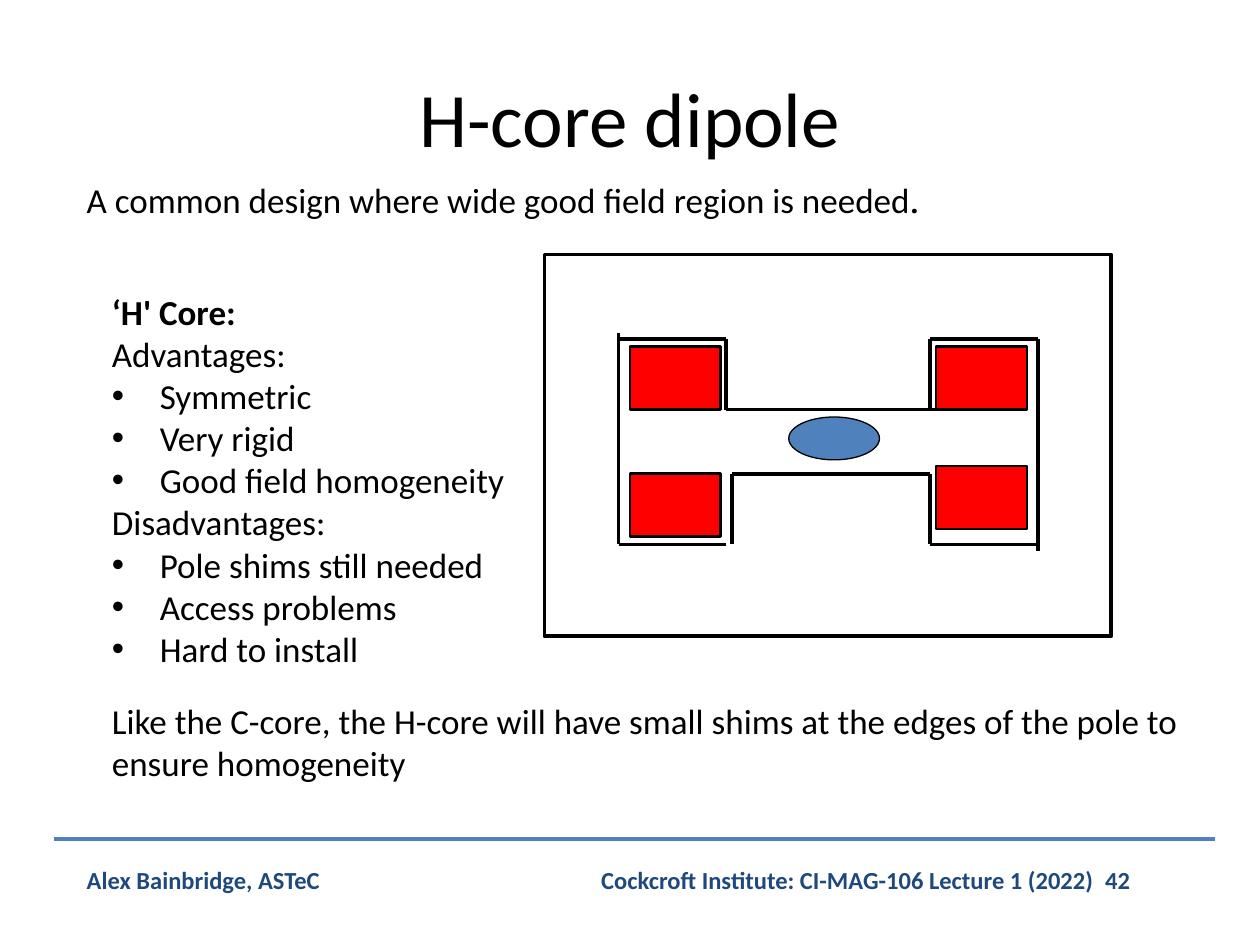
from pptx import Presentation
from pptx.dml.color import RGBColor
from pptx.enum.shapes import MSO_CONNECTOR as CONN, MSO_SHAPE as SHAPE
from pptx.enum.text import MSO_ANCHOR as ANCHOR, PP_ALIGN as ALIGN
from pptx.oxml.ns import qn
from pptx.util import Inches, Pt
from lxml import etree

BLACK, NAVY, BLUE, RED = "000000", "1F497D", "4F81BD", "FF0000"


def rgb(value):
    return RGBColor.from_string(value)


class SlideBuilder:
    font = "Calibri"

    def __init__(self, slide):
        self.s = slide

    def text(self, box, lines, size=20, color=BLACK, bold=False,
             align=ALIGN.LEFT, anchor=ANCHOR.TOP):
        tf = self.s.shapes.add_textbox(*map(Inches, box)).text_frame
        tf.word_wrap = True
        tf.vertical_anchor = anchor
        for i, line in enumerate(lines):
            p = tf.paragraphs[0] if i == 0 else tf.add_paragraph()
            p.add_run().text = line
            p.alignment = align
            f = p.font
            f.name, f.size, f.bold = self.font, Pt(size), bold
            f.color.rgb = rgb(color)
        return tf

    def bullet(self, p, indent=0.38):
        pPr = p._p.get_or_add_pPr()
        pPr.set("marL", str(Inches(indent)))
        pPr.set("indent", str(-Inches(indent)))
        bu_font = etree.Element(qn("a:buFont"), typeface="Arial")
        bu_char = etree.Element(qn("a:buChar"), char="•")
        # Bullet marks come before the default run properties
        pPr.insert(0, bu_font)
        bu_font.addnext(bu_char)

    def shape(self, kind, box, fill=None, width=1.5):
        sp = self.s.shapes.add_shape(kind, *map(Inches, box))
        sp.shadow.inherit = False
        if fill:
            sp.fill.solid()
            sp.fill.fore_color.rgb = rgb(fill)
        else:
            sp.fill.background()
        sp.line.color.rgb = rgb(BLACK)
        sp.line.width = Pt(width)

    def line(self, x1, y1, x2, y2, color=BLACK, width=2):
        c = self.s.shapes.add_connector(
            CONN.STRAIGHT, *map(Inches, (x1, y1, x2, y2)))
        c.line.color.rgb = rgb(color)
        c.line.width = Pt(width)
        etree.SubElement(c._element.spPr, qn("a:effectLst"))


def main():
    prs = Presentation()
    prs.slide_width, prs.slide_height = Inches(10), Inches(7.5)
    b = SlideBuilder(prs.slides.add_slide(prs.slide_layouts[6]))

    # Footer
    b.text((0.59, 6.82, 3.86, 0.34), ["Alex Bainbridge, ASTeC"],
           14, NAVY, True)
    b.line(0.43, 6.66, 9.64, 6.66, BLUE)
    b.text((4.1, 6.82, 5.54, 0.34),
           ["Cockcroft Institute: CI-MAG-106 Lecture 1 (2022)\t42"],
           14, NAVY, True, ALIGN.CENTER)

    # Title and introduction
    b.text((0.5, 0.3, 9, 1.25), ["H-core dipole"], 44,
           align=ALIGN.CENTER, anchor=ANCHOR.MIDDLE)
    tf = b.text((0.59, 1.37, 8.74, 0.44),
                ["A common design where wide good field region is needed"])
    stop = tf.paragraphs[0].add_run()
    stop.text, stop.font.name = ".", "Vollkorn"

    # Advantages and disadvantages
    headings = ["‘H' Core:", "Advantages:", "Disadvantages:"]
    tf = b.text((0.79, 2.26, 3.86, 3.13), [
        *headings[:2], "Symmetric", "Very rigid", "Good field homogeneity",
        headings[2], "Pole shims still needed", "Access problems",
        "Hard to install"])
    tf.paragraphs[0].font.bold = True
    for p in tf.paragraphs:
        if p.text not in headings:
            b.bullet(p)
    b.text((0.79, 5.5, 8.7, 0.77),
           ["Like the C-core, the H-core will have small shims at the edges "
            "of the pole to ensure homogeneity"])

    # Yoke: outer frame, side walls, coil slots and poles
    b.shape(SHAPE.RECTANGLE, (4.32, 2.02, 4.5, 3.03), width=2)
    left, right = 4.91, 8.24
    pole_left, pole_right = 5.76, 7.38
    top, bottom = 2.69, 4.32
    gap_top, gap_bottom = 3.25, 3.76
    b.line(left, top - 0.05, left, bottom)
    b.line(right, top, right, bottom + 0.05)
    for x1, x2 in ((left, pole_left), (pole_right, right)):
        for y in (top, bottom):
            b.line(x1, y, x2, y)
    for x_top, x_bottom in ((pole_left, pole_left + 0.05),
                            (pole_right, pole_right)):
        b.line(x_top, top, x_top, gap_top)
        b.line(x_bottom, gap_bottom, x_bottom, bottom)
    b.line(pole_left, gap_top, pole_right + 0.05, gap_top)
    b.line(pole_left + 0.05, gap_bottom, pole_right, gap_bottom)

    # Coils and beam aperture
    for x, lower in ((5, 3.76), (7.43, 3.7)):
        for y in (2.75, lower):
            b.shape(SHAPE.RECTANGLE, (x, y, 0.72, 0.5), RED)
    b.shape(SHAPE.OVAL, (6.26, 3.31, 0.72, 0.34), BLUE, 0.75)

    prs.save("out.pptx")


if __name__ == "__main__":
    main()
